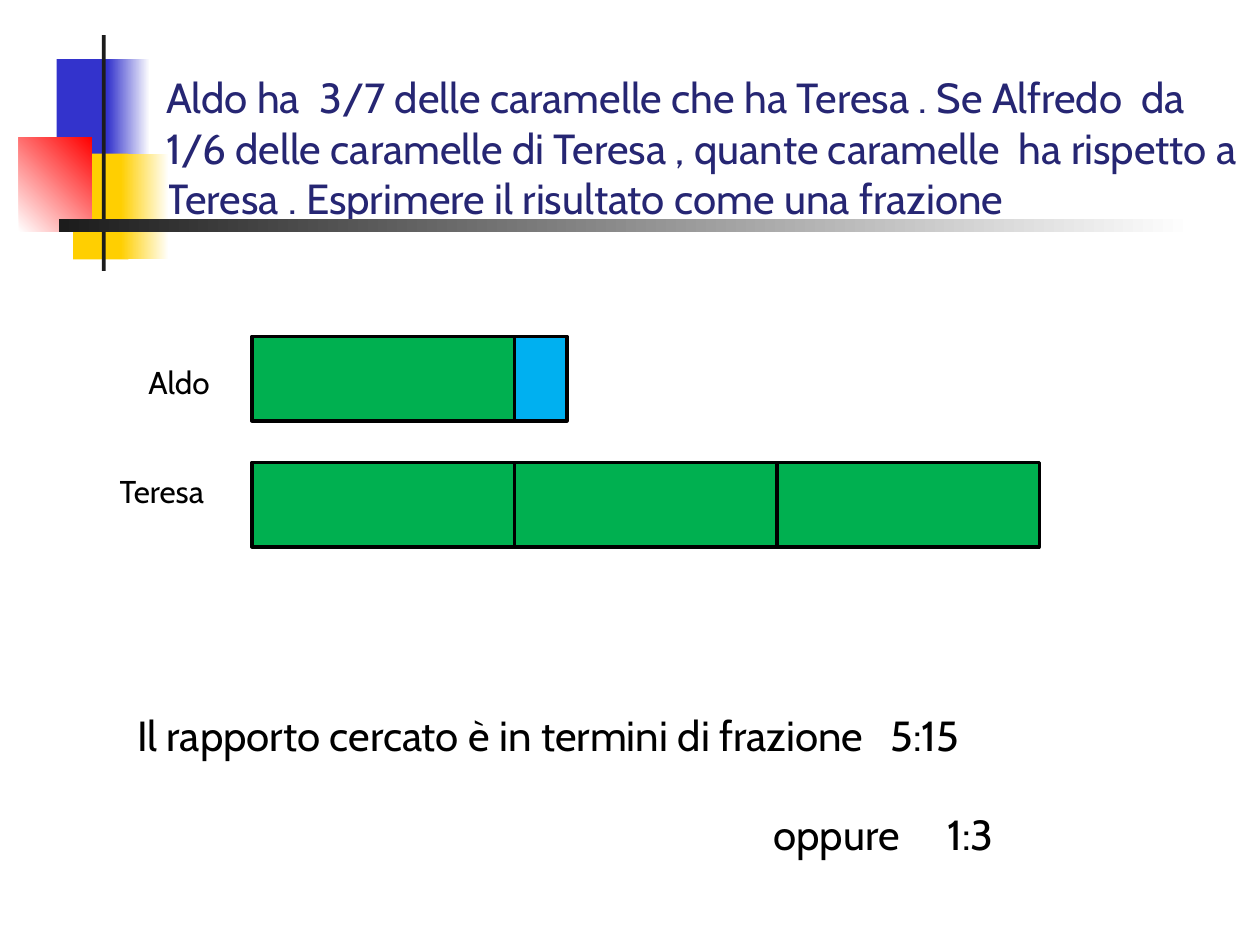
import pptx
import pptx.util
import pptx.dml.color
import pptx.enum.shapes
import pptx.enum.text
from lxml import etree

COLORS = {
    "title": "262673", "text": "000000", "outline": "000000",
    "part": "00B050", "candy": "00B0F0",
    "blue": "3333CC", "yellow": "FFCF01", "red": "FF0000",
    "dark": "1C1C1C", "white": "FFFFFF",
}
FONT = "Cabin"

# words, colour, points, (left, top, width, height), tab stop
TEXTS = [
    ("Aldo ha  3/7 delle caramelle che ha Teresa . Se Alfredo  da 1/6 delle caramelle "
     "di Teresa , quante caramelle  ha rispetto a Teresa . Esprimere il risultato come "
     "una frazione", "title", 24, (1.22, 0.52, 8.78, 1.31), None),
    ("Aldo", "text", 18, (1.08, 2.83, 0.83, 0.4), None),
    ("Teresa", "text", 18, (0.85, 3.7, 1.15, 0.4), None),
    ("Il rapporto cercato è in termini di frazione\t5:15", "text", 24,
     (0.99, 5.58, 7.76, 0.51), 5.98),
    ("oppure\t1:3", "text", 24, (6.04, 6.37, 2.62, 0.5), 1.38),
]

# Candy grid: one column is one candy; each bar lists (colour, candies)
GRID_LEFT, GRID_TOP = 2, 2.67
CANDY, ROW, BAR_HEIGHT = 5 / 12, 1, 0.67
BARS = [
    [("part", 5), ("candy", 1)],  # Aldo
    [("part", 5)] * 3,            # Teresa
]

# (left, top, width, height), start colour, end colour or None, gradient angle
ORNAMENT = [
    ((0.45, 0.47, 0.45, 0.84), "blue", None, 0),
    ((0.85, 0.47, 0.34, 0.84), "blue", "white", 0),
    ((0.58, 1.22, 0.44, 0.84), "yellow", None, 0),
    ((0.96, 1.22, 0.38, 0.84), "yellow", "white", 0),
    ((0.15, 1.09, 0.58, 0.75), "white", "red", 45),
    ((0.81, 0.28, 0.03, 1.87), "dark", None, 0),
    ((0.47, 1.74, 9, 0.1), "dark", "white", 0),
]


def rgb(name):
    return pptx.dml.color.RGBColor.from_string(COLORS[name])


def inches(box):
    return [pptx.util.Inches(length) for length in box]


def add_words(slide, words, color, points, box, tab):
    frame = slide.shapes.add_textbox(*inches(box)).text_frame
    frame.word_wrap = True
    frame.auto_size = pptx.enum.text.MSO_AUTO_SIZE.SHAPE_TO_FIT_TEXT
    paragraph = frame.paragraphs[0]
    run = paragraph.add_run()
    run.text = words
    for attribute, value in {"name": FONT, "size": pptx.util.Pt(points)}.items():
        setattr(run.font, attribute, value)
    run.font.color.rgb = rgb(color)
    if tab:
        namespace = pptx.oxml.ns.qn
        tabs = etree.SubElement(paragraph._p.get_or_add_pPr(), namespace("a:tabLst"))
        etree.SubElement(tabs, namespace("a:tab"),
                         pos=str(pptx.util.Inches(tab)), algn="l")


def add_block(slide, box, color, fade=None, angle=0, outlined=False):
    block = slide.shapes.add_shape(
        pptx.enum.shapes.MSO_SHAPE.RECTANGLE, *inches(box))
    block.shadow.inherit = False
    if fade:
        block.fill.gradient()
        block.fill.gradient_angle = angle
        for stop, name, position in zip(block.fill.gradient_stops, (color, fade), (0, 1)):
            stop.color.rgb = rgb(name)
            stop.position = position
    else:
        block.fill.solid()
        block.fill.fore_color.rgb = rgb(color)
    if outlined:
        block.line.color.rgb = rgb("outline")
        block.line.width = pptx.util.Pt(2)
    else:
        block.line.fill.background()


def add_bars(slide):
    for row, parts in enumerate(BARS):
        column = 0
        for color, candies in parts:
            box = (GRID_LEFT + column * CANDY, GRID_TOP + row * ROW,
                   candies * CANDY, BAR_HEIGHT)
            add_block(slide, box, color, outlined=True)
            column += candies


def main():
    deck = pptx.Presentation()
    deck.slide_width, deck.slide_height = inches((10, 7.5))
    slide = deck.slides.add_slide(deck.slide_layouts[6])
    for text in TEXTS:
        add_words(slide, *text)
    add_bars(slide)
    for piece in ORNAMENT:
        add_block(slide, *piece)
    deck.save("out.pptx")


if __name__ == "__main__":
    main()
